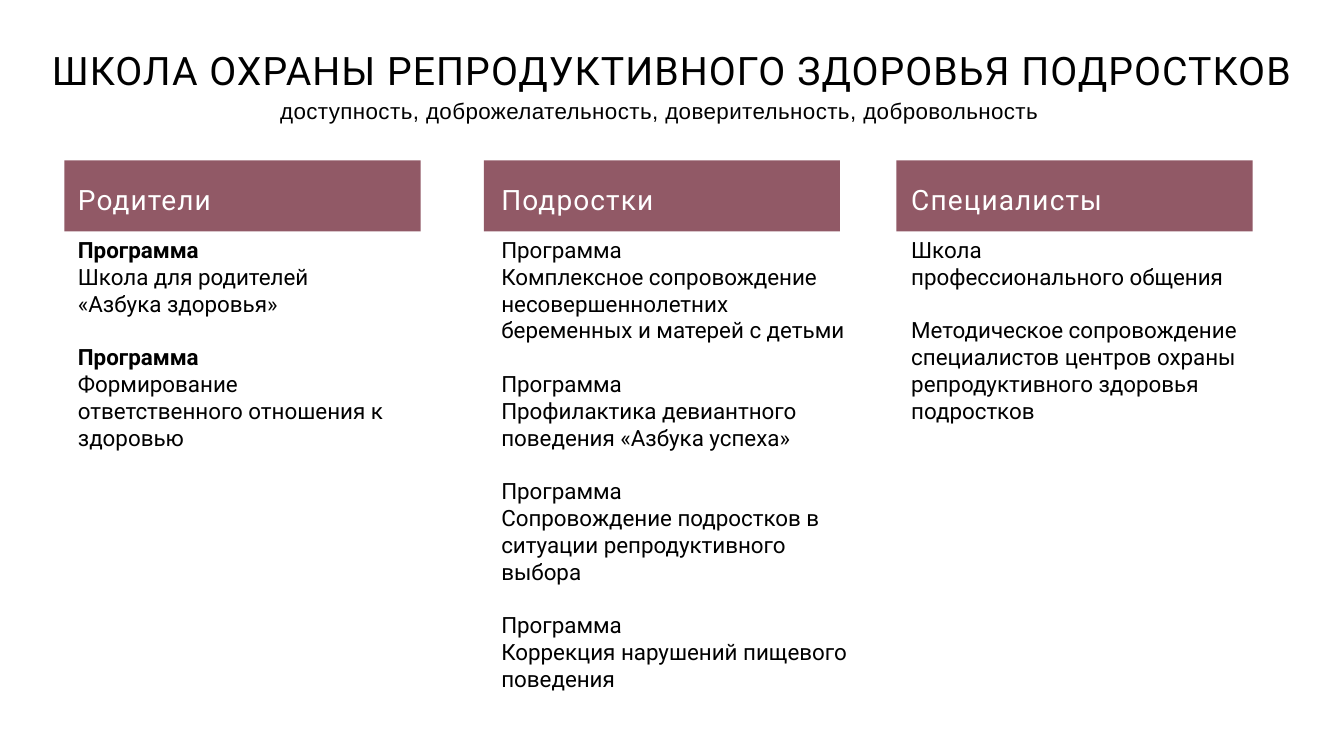
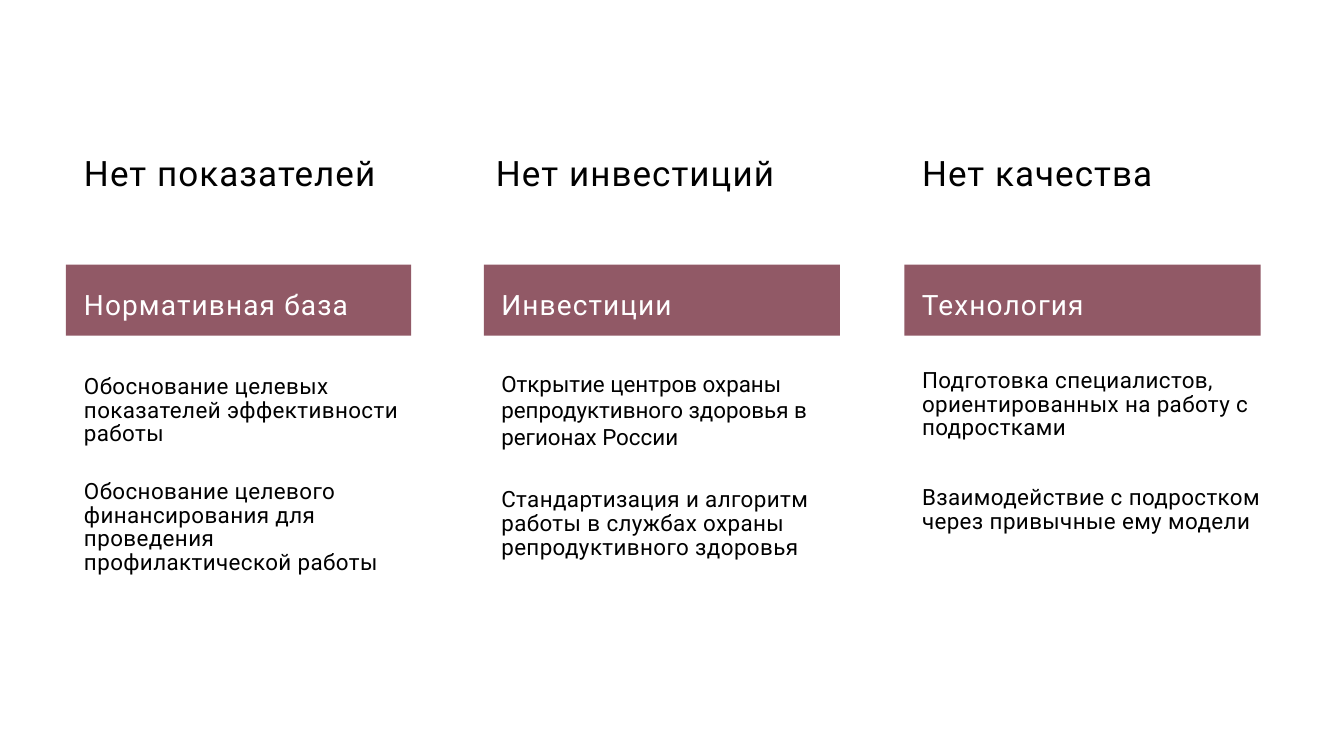
from pptx import Presentation
from pptx.dml.color import RGBColor
from pptx.enum.shapes import MSO_SHAPE as Preset
from pptx.enum.text import MSO_ANCHOR as Anchor, MSO_AUTO_SIZE as AutoSize, PP_ALIGN as Align
from pptx.util import Inches, Pt
from lxml.etree import SubElement

BLACK = RGBColor(0x00, 0x00, 0x00)
WHITE = RGBColor(0xFF, 0xFF, 0xFF)
PLUM = RGBColor(0x91, 0x59, 0x66)

deck = Presentation()
deck.slide_width, deck.slide_height = Inches(13.33), Inches(7.5)
COL, ROW = deck.slide_width / 100, deck.slide_height / 100
COMPARISON = deck.slide_layouts[4]
BAND_WIDTH, BAND_HEIGHT = 26.5, 9.4


def place(shape, left, top, width, height):
    shape.left, shape.top = int(left * COL), int(top * ROW)
    shape.width, shape.height = int(width * COL), int(height * ROW)
    frame = shape.text_frame
    frame.word_wrap, frame.auto_size = True, AutoSize.NONE
    frame.vertical_anchor = Anchor.TOP
    frame.margin_left = frame.margin_top = frame.margin_right = frame.margin_bottom = 0
    return frame


def write(frame, text, size=16, font="Roboto", color=BLACK, bold=False,
          align=Align.LEFT, tracking=0, leading=1.0, gap=0):
    paragraph = frame.paragraphs[0] if not frame.text else frame.add_paragraph()
    paragraph.alignment, paragraph.line_spacing = align, leading
    paragraph.space_before, paragraph.space_after = Pt(gap), Pt(0)
    props = paragraph._p.get_or_add_pPr()
    props.set("marL", "0")
    props.set("indent", "0")
    SubElement(props, "{http://schemas.openxmlformats.org/drawingml/2006/main}buNone")
    run = paragraph.add_run()
    run.text = text
    run.font.size, run.font.name, run.font.bold = Pt(size), font, bold
    run.font.color.rgb = color
    run.font._element.set("spc", str(int(tracking * 100)))


school = deck.slides.add_slide(COMPARISON)
title = place(school.shapes.title, 2.7, 6.1, 94.6, 6.3)
write(title, "ШКОЛА ОХРАНЫ РЕПРОДУКТИВНОГО ЗДОРОВЬЯ ПОДРОСТКОВ",
      size=28, align=Align.CENTER, tracking=0.8)
principles = place(school.placeholders[4], 13.2, 12.8, 71.8, 3.6)
write(principles, "доступность, доброжелательность, доверительность, добровольность",
      font="Arial", align=Align.CENTER, tracking=0.3)

audiences = [
    (4.8, 5.8, 24, "Родители", True, [
        ["Программа", "Школа для родителей", "«Азбука здоровья»"],
        ["Программа", "Формирование ответственного отношения к здоровью"],
    ]),
    (36, 37.3, 26, "Подростки", False, [
        ["Программа", "Комплексное сопровождение несовершеннолетних беременных и матерей с детьми"],
        ["Программа", "Профилактика девиантного поведения «Азбука успеха»"],
        ["Программа", "Сопровождение подростков в ситуации репродуктивного выбора"],
        ["Программа", "Коррекция нарушений пищевого поведения"],
    ]),
    (66.7, 67.8, 26, "Специалисты", False, [
        ["Школа", "профессионального общения"],
        ["Методическое сопровождение",
         "специалистов центров охраны репродуктивного здоровья подростков"],
    ]),
]
bands = []
for number, (left, text_left, width, audience, bold_lead, programs) in enumerate(audiences):
    bands.append((school, left, text_left, 21.2, 0.7, BAND_WIDTH, audience))
    body = place(school.placeholders[number + 1], text_left, 31.2, width, 65)
    for order, program in enumerate(programs):
        for line, text in enumerate(program):
            write(body, text, bold=bold_lead and line == 0,
                  gap=19 if order and line == 0 else 0)

barriers = deck.slides.add_slide(COMPARISON)
spare = barriers.placeholders[4]._element
spare.getparent().remove(spare)

TIGHT = {"tracking": 0.3, "leading": Pt(17)}
solutions = [
    (4.9, 25.7, 6.25, 6.25, 24.6, 49.6, "Нет показателей", "Нормативная база", TIGHT, 24,
     ["Обоснование целевых показателей эффективности работы",
      "Обоснование целевого финансирования для проведения профилактической работы"]),
    (36, BAND_WIDTH, 37.3, 36.9, 26.8, 48.9, "Нет инвестиций", "Инвестиции", {}, 27,
     ["Открытие центров охраны репродуктивного здоровья в регионах России",
      "Стандартизация и алгоритм работы в службах охраны репродуктивного здоровья"]),
    (67.3, BAND_WIDTH, 68.6, 68.6, 26.8, 48.8, "Нет качества", "Технология", TIGHT, 33,
     ["Подготовка специалистов, ориентированных на работу с подростками",
      "Взаимодействие с подростком через привычные ему модели"]),
]
for number, (left, band_width, text_left, barrier_left, width, top,
             barrier, solution, lead_style, gap, (lead, follow)) in enumerate(solutions):
    heading = barriers.shapes.add_textbox(0, 0, 0, 0) if number else barriers.shapes.title
    write(place(heading, barrier_left, 18.9, 28.7, 6.3), barrier,
          size=25, tracking=0.8, leading=Pt(36))
    bands.append((barriers, left, text_left, 35, 0.8, band_width, solution))
    body = place(barriers.placeholders[number + 1], text_left, top, width, 30)
    write(body, lead, **lead_style)
    write(body, follow, gap=gap, **TIGHT)

for slide, left, text_left, top, drop, width, label in bands:
    band = slide.shapes.add_shape(Preset.RECTANGLE, 0, 0, 0, 0)
    band.shadow.inherit = False
    band.fill.solid()
    band.fill.fore_color.rgb = PLUM
    band.line.fill.background()
    frame = place(band, left, top, width, BAND_HEIGHT)
    frame.margin_left, frame.margin_top = int((text_left - left) * COL), int(drop * ROW)
    write(frame, label, size=20, color=WHITE, tracking=0.8, leading=Pt(36))

deck.save("out.pptx")
